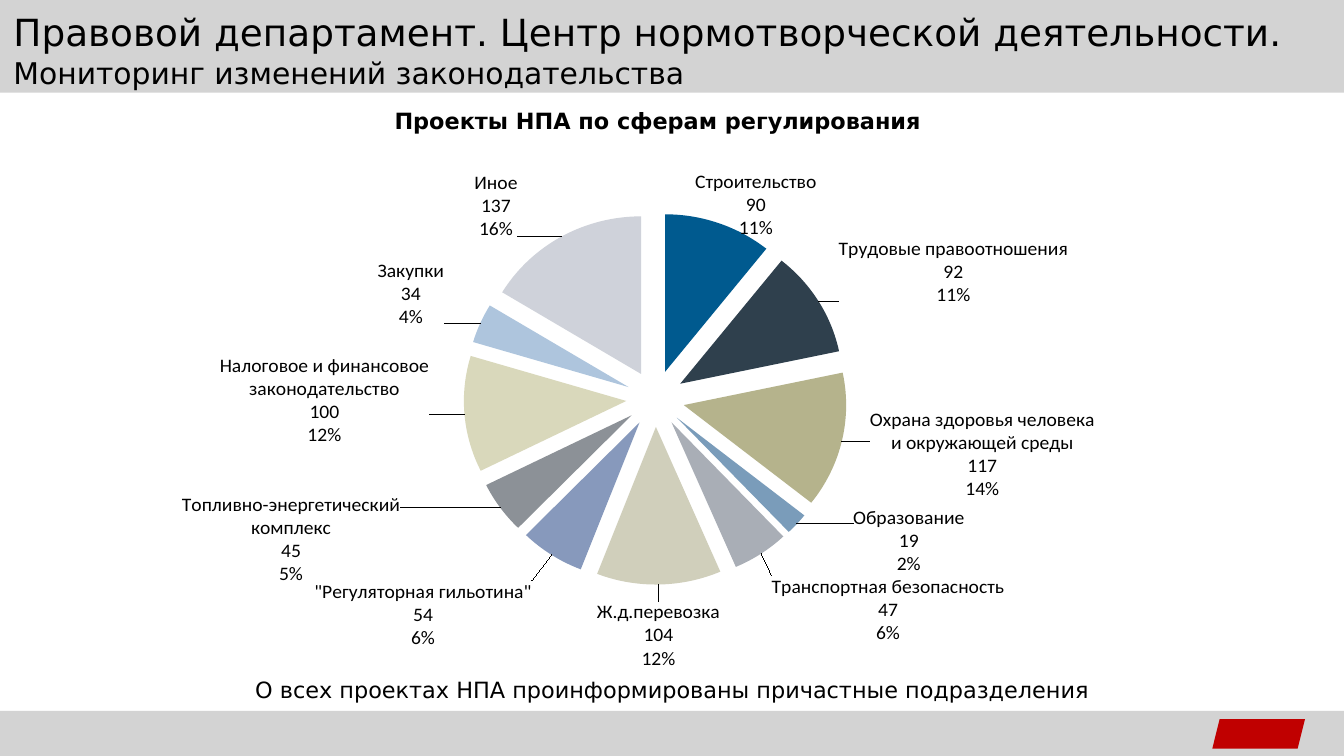
from math import cos, pi, sin

from lxml import etree
from pptx import Presentation
from pptx.chart.data import CategoryChartData
from pptx.dml.color import RGBColor
from pptx.enum.chart import XL_CHART_TYPE
from pptx.enum.shapes import MSO_SHAPE
from pptx.enum.text import MSO_ANCHOR, MSO_AUTO_SIZE, PP_ALIGN
from pptx.oxml import parse_xml
from pptx.oxml.ns import nsdecls, qn
from pptx.util import Inches, Pt

PIE = XL_CHART_TYPE.PIE
RECTANGLE, PARALLELOGRAM = MSO_SHAPE.RECTANGLE, MSO_SHAPE.PARALLELOGRAM
LEFT, CENTER = PP_ALIGN.LEFT, PP_ALIGN.CENTER
MIDDLE, TOP = MSO_ANCHOR.MIDDLE, MSO_ANCHOR.TOP

COLORS = {"band": "D3D3D3", "mark": "C00000", "text": "000000"}
TITLE_FONT, CHART_FONT = "DejaVu Sans", "Calibri"
HEADING = [
    ("Правовой департамент. Центр нормотворческой деятельности.", 20),
    ("Мониторинг изменений законодательства", 16),
]
SUBTITLE = "Проекты НПА по сферам регулирования"
CONCLUSION = "О всех проектах НПА проинформированы причастные подразделения"

# sphere, drafts, slice colour, label: centre x, centre y, width (inches), lines
SPHERES = [
    ("Строительство", 90, "005A8F", 5.63, 1.53, 0.90, 3),
    ("Трудовые правоотношения", 92, "2F404D", 7.11, 2.02, 1.70, 3),
    ("Охрана здоровья человека и окружающей среды", 117, "B5B38C", 7.33, 3.35, 1.67, 4),
    ("Образование", 19, "7A9CBA", 6.78, 3.99, 0.83, 3),
    ("Транспортная безопасность", 47, "A9AEB6", 6.62, 4.51, 1.73, 3),
    ("Ж.д.перевозка", 104, "D0CFBB", 4.90, 4.70, 0.92, 3),
    ('"Регуляторная гильотина"', 54, "8799BC", 3.14, 4.55, 1.61, 3),
    ("Топливно-энергетический комплекс", 45, "8C9197", 2.15, 3.98, 1.62, 4),
    ("Налоговое и финансовое законодательство", 100, "D9D8BB", 2.39, 2.96, 1.56, 4),
    ("Закупки", 34, "AEC5DD", 3.04, 2.18, 0.49, 3),
    ("Иное", 137, "CFD2DA", 3.68, 1.53, 0.32, 3),
]
CHART_BOX = (0.52, 1.09, 8.74, 3.9)
PLOT = {"x": 0.333, "y": 0.1, "w": 0.331, "h": 0.731}
EXPLOSION = 18
LABEL_LINE, LABEL_GAP = 0.17, 0.06
PIE_DROP, PIE_SQUEEZE = 0.04, 0.96


def style(run, size, font=TITLE_FONT, bold=False):
    run.font.size = Pt(size)
    run.font.name = font
    run.font.bold = bold
    run.font.color.rgb = RGBColor.from_string(COLORS["text"])


def place(shape, box):
    shape.left, shape.top, shape.width, shape.height = map(Inches, box)


def add_block(slide, kind, box, color):
    block = slide.shapes.add_shape(kind, *map(Inches, box))
    block.shadow.inherit = False
    block.fill.solid()
    block.fill.fore_color.rgb = RGBColor.from_string(color)
    block.line.fill.background()
    return block


def write(shape, lines, align, anchor, bold=False):
    frame = shape.text_frame
    frame.word_wrap = True
    frame.auto_size = MSO_AUTO_SIZE.NONE
    frame.vertical_anchor = anchor
    paragraph = frame.paragraphs[0]
    paragraph.text = "\v".join(text for text, _ in lines)
    paragraph.alignment = align
    paragraph.space_before = Pt(0)
    for run, (_, size) in zip(paragraph.runs, lines):
        style(run, size, bold=bold)
    return paragraph


def label_offsets():
    """Yield each label's shift from the slice edge, as shares of the chart size."""
    left, top, width, height = CHART_BOX
    center_x = left + width * (PLOT["x"] + PLOT["w"] / 2)
    center_y = top + height * (PLOT["y"] + PLOT["h"] / 2) + PIE_DROP
    radius_x = width * PLOT["w"] / 2 + LABEL_GAP
    radius_y = height * PLOT["h"] / 2 * PIE_SQUEEZE + LABEL_GAP
    total = sum(sphere[1] for sphere in SPHERES)
    done = 0
    for _, drafts, _, x, y, label_width, lines in SPHERES:
        angle = 2 * pi * (done + drafts / 2) / total
        done += drafts
        across, down = sin(angle), -cos(angle)
        side_x, side_y = (
            0 if abs(part) < sin(pi / 36) else (1 if part > 0 else -1)
            for part in (across, down)
        )
        edge_x = center_x + radius_x * across + side_x * label_width / 2
        edge_y = center_y + radius_y * down + side_y * lines * LABEL_LINE / 2
        yield (x - edge_x) / width, (y - edge_y) / height


def label_options():
    flags = {"LegendKey": 0, "Val": 1, "CatName": 1, "SerName": 0, "Percent": 1, "BubbleSize": 0}
    shows = "".join(f'<c:show{name} val="{on}"/>' for name, on in flags.items())
    return f'<c:dLblPos val="outEnd"/>{shows}<c:separator>\n</c:separator>'


def label_xml():
    text = (
        '<c:txPr><a:bodyPr/><a:p><a:pPr><a:defRPr sz="1050" b="0"><a:solidFill>'
        f'<a:srgbClr val="{COLORS["text"]}"/></a:solidFill>'
        f'<a:latin typeface="{CHART_FONT}"/></a:defRPr></a:pPr>'
        '<a:endParaRPr lang="ru-RU"/></a:p></c:txPr>'
    )
    labels = "".join(
        f'<c:dLbl><c:idx val="{index}"/><c:layout><c:manualLayout>'
        f'<c:x val="{x:.4f}"/><c:y val="{y:.4f}"/></c:manualLayout></c:layout>'
        f"{text}{label_options()}</c:dLbl>"
        for index, (x, y) in enumerate(label_offsets())
    )
    return (
        f'<c:dLbls {nsdecls("c", "a")}>{labels}{text}{label_options()}'
        '<c:showLeaderLines val="1"/></c:dLbls>'
    )


def set_plot_layout(chart):
    plot_area = chart.element.find(".//" + qn("c:plotArea"))
    for old in plot_area.findall(qn("c:layout")):
        plot_area.remove(old)
    layout = parse_xml(f'<c:layout {nsdecls("c")}><c:manualLayout/></c:layout>')
    values = {"layoutTarget": "inner", "xMode": "edge", "yMode": "edge", **PLOT}
    for name, value in values.items():
        etree.SubElement(layout[0], qn("c:" + name)).set("val", str(value))
    plot_area.insert(0, layout)


def add_pie(slide):
    data = CategoryChartData()
    data.categories = [sphere[0] for sphere in SPHERES]
    data.add_series("Series 1", [sphere[1] for sphere in SPHERES])
    chart = slide.shapes.add_chart(PIE, *map(Inches, CHART_BOX), data).chart
    chart.has_legend = False
    chart.has_title = False
    chart.font.name = CHART_FONT
    chart.font.size = Pt(18)
    chart.font.color.rgb = RGBColor.from_string(COLORS["text"])
    plot = chart.plots[0]
    plot.vary_by_categories = True
    series = plot.series[0]
    for index, sphere in enumerate(SPHERES):
        slice_format = series.points[index].format
        slice_format.fill.solid()
        slice_format.fill.fore_color.rgb = RGBColor.from_string(sphere[2])
        slice_format.line.fill.background()
    pie_series = series._element
    explosion = f'<c:explosion {nsdecls("c")} val="{EXPLOSION}"/>'
    points = pie_series.findall(qn("c:dPt"))
    for following in [points[0]] + [point.find(qn("c:spPr")) for point in points]:
        following.addprevious(parse_xml(explosion))
    pie_series.find(qn("c:cat")).addprevious(parse_xml(label_xml()))
    set_plot_layout(chart)


def main():
    deck = Presentation()
    deck.slide_width = Inches(10)
    deck.slide_height = deck.slide_width * 9 // 16
    slide = deck.slides.add_slide(deck.slide_layouts[1])
    heading, subtitle = slide.shapes.title, slide.placeholders[1]

    for band in ((0, 5.29, 10, 0.34), (0, 0, 10, 0.69)):
        block = add_block(slide, RECTANGLE, band, COLORS["band"])
        heading.element.addprevious(block.element)
    add_block(slide, PARALLELOGRAM, (9.02, 5.35, 0.69, 0.22), COLORS["mark"])

    place(heading, (0, 0.14, 10, 0.46))
    write(heading, HEADING, LEFT, MIDDLE)
    place(subtitle, (0, 0.75, 9.79, 0.24))
    paragraph = write(subtitle, [(SUBTITLE, 12)], CENTER, TOP, bold=True)
    properties = paragraph._p.get_or_add_pPr()
    properties.set("marL", "0")
    properties.set("indent", "0")
    etree.SubElement(properties, qn("a:buNone"))

    add_pie(slide)
    conclusion = slide.shapes.add_textbox(*map(Inches, (0.28, 4.98, 9.45, 0.3)))
    write(conclusion, [(CONCLUSION, 12)], CENTER, TOP)
    deck.save("out.pptx")


if __name__ == "__main__":
    main()
